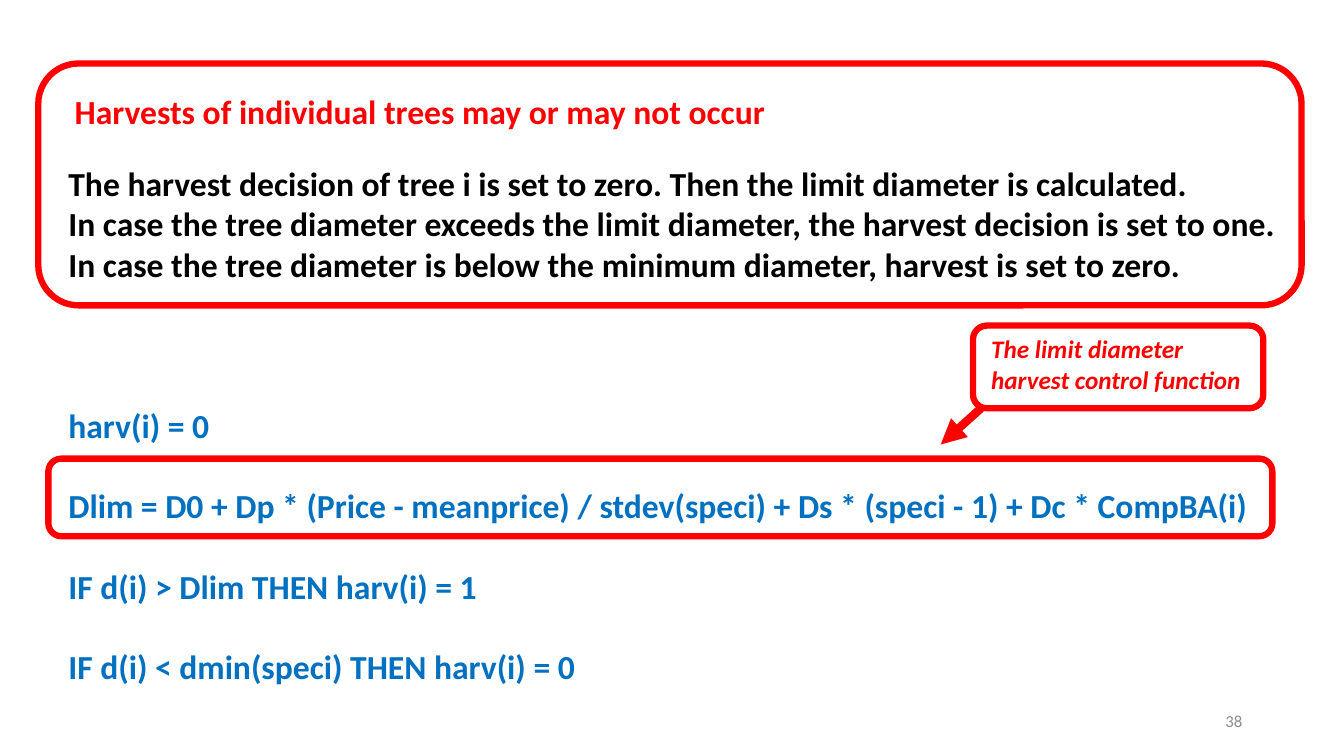
import pptx
import pptx.util
import pptx.dml.color
import pptx.enum.shapes
import pptx.enum.text
import lxml.etree

Inches = pptx.util.Inches
Pt = pptx.util.Pt
RED = "FF0000"
BLUE = "0070C0"
LINE_PITCH = 28.75


def color(value):
    return pptx.dml.color.RGBColor.from_string(value)


def style(para, size, value, bold=True, italic=False):
    for span in para.runs:
        span.font.name = "Calibri"
        span.font.size = Pt(size)
        span.font.bold = bold
        span.font.italic = italic
        span.font.color.rgb = color(value)


deck = pptx.Presentation()
deck.slide_width = Inches(13.33)
deck.slide_height = Inches(7.5)
page = deck.slides.add_slide(deck.slide_layouts[5])

title = page.shapes.title
title.left, title.top = Inches(0.64), Inches(0.85)
title.width, title.height = Inches(12), Inches(0.5)
title.text_frame.text = "Harvests of individual trees may or may not occur"
title.text_frame.auto_size = pptx.enum.text.MSO_AUTO_SIZE.NONE
title.text_frame.vertical_anchor = pptx.enum.text.MSO_ANCHOR.TOP
title.text_frame.paragraphs[0].alignment = pptx.enum.text.PP_ALIGN.LEFT
style(title.text_frame.paragraphs[0], 24, RED)

body_lines = [
    ("The harvest decision of tree i is set to zero. Then the limit diameter is calculated.", "000000", 0),
    ("In case the tree diameter exceeds the limit diameter, the harvest decision is set to one.", "000000", 0),
    ("In case the tree diameter is below the minimum diameter, harvest is set to zero.", "000000", 0),
    ("harv(i) = 0", BLUE, 3),
    ("Dlim = D0 + Dp * (Price - meanprice) / stdev(speci) + Ds * (speci - 1) + Dc * CompBA(i)", BLUE, 1),
    ("IF d(i) > Dlim THEN harv(i) = 1", BLUE, 1),
    ("IF d(i) < dmin(speci) THEN harv(i) = 0", BLUE, 1),
]
body = page.shapes.add_textbox(Inches(0.58), Inches(1.57), Inches(12.4), Inches(5.33))
body.text_frame.word_wrap = True
body.text_frame.text = "\n".join(text for text, value, gap in body_lines)
for para, (text, value, gap) in zip(body.text_frame.paragraphs, body_lines):
    para.line_spacing = Pt(LINE_PITCH)
    para.space_before = Pt(gap * LINE_PITCH)
    style(para, 24, value)

number = page.shapes.add_textbox(Inches(9.42), Inches(6.95), Inches(3), Inches(0.4))
number.text_frame.word_wrap = True
number.text_frame.vertical_anchor = pptx.enum.text.MSO_ANCHOR.MIDDLE
number.text_frame.text = "38"
number.text_frame.paragraphs[0].alignment = pptx.enum.text.PP_ALIGN.RIGHT
style(number.text_frame.paragraphs[0], 12, "8C8C8C", bold=False)

arrow = page.shapes.add_connector(
    pptx.enum.shapes.MSO_CONNECTOR.STRAIGHT,
    Inches(9.73), Inches(4.05), Inches(9.33), Inches(4.41))
arrow.line.color.rgb = color(RED)
arrow.line.width = Pt(6)
namespace = pptx.oxml.ns.qn("a:tailEnd")
lxml.etree.SubElement(arrow.line._get_or_add_ln(), namespace, type="triangle")
lxml.etree.SubElement(arrow._element.spPr, pptx.oxml.ns.qn("a:effectLst"))

frames = [
    (0.38, 0.63, 12.53, 2.4, ""),
    (0.48, 4.55, 12.14, 0.77, ""),
    (9.65, 3.23, 2.88, 0.82, "The limit diameter\nharvest control function"),
]
for left, top, width, height, label in frames:
    frame = page.shapes.add_shape(
        pptx.enum.shapes.MSO_SHAPE.ROUNDED_RECTANGLE,
        Inches(left), Inches(top), Inches(width), Inches(height))
    frame.shadow.inherit = False
    frame.fill.background()
    frame.line.color.rgb = color(RED)
    frame.line.width = Pt(4.5)
    if label:
        frame.text_frame.text = label
        frame.text_frame.word_wrap = True
        frame.text_frame.margin_left = Inches(0.14)
        frame.text_frame.margin_right = Inches(0)
        frame.text_frame.margin_top = Inches(0)
        frame.text_frame.margin_bottom = Inches(0.06)
        for para in frame.text_frame.paragraphs:
            para.alignment = pptx.enum.text.PP_ALIGN.LEFT
            style(para, 18, RED, italic=True)

deck.save("out.pptx")
